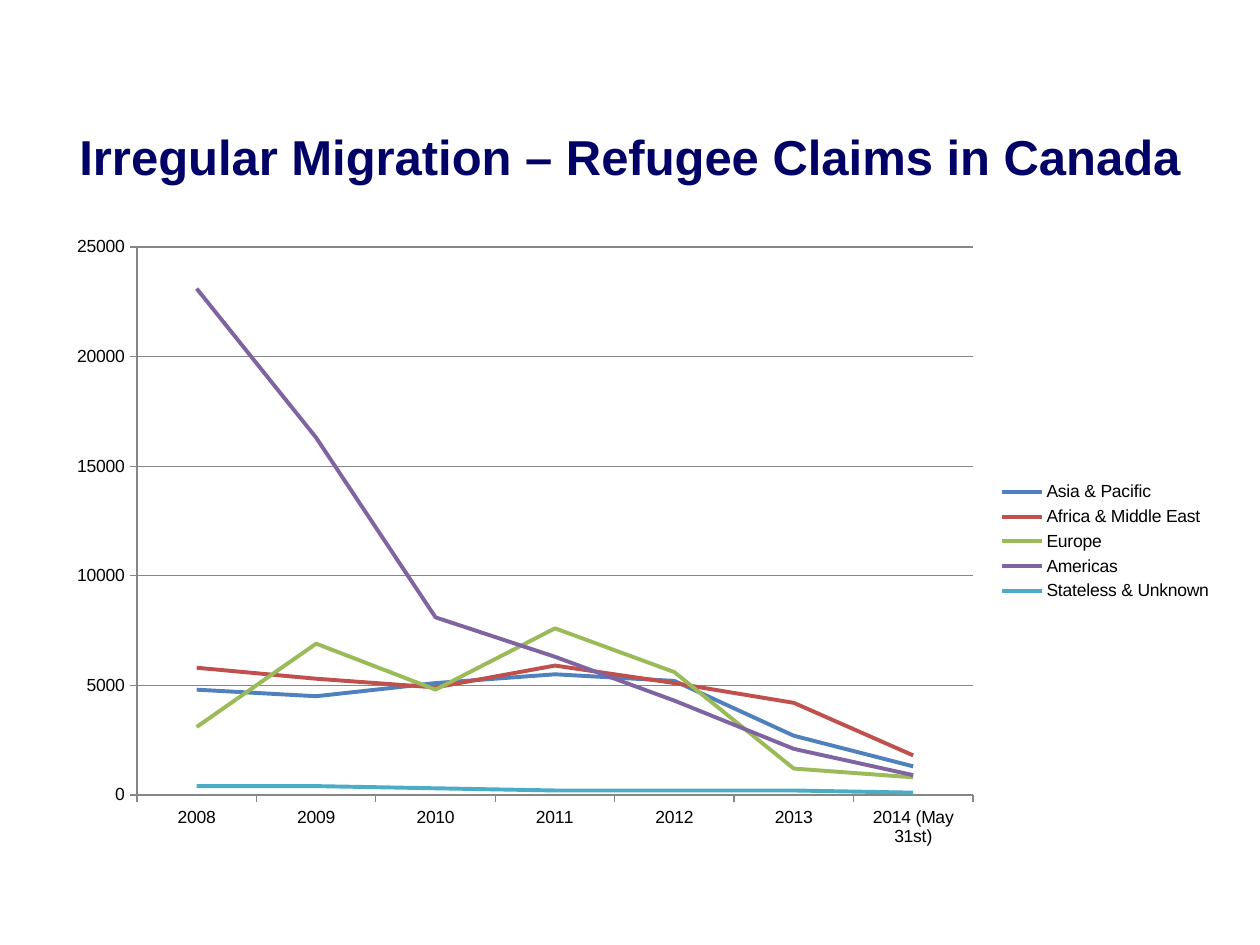
import lxml.etree
import pptx
import pptx.chart.data
import pptx.dml.color
import pptx.enum.chart
import pptx.enum.text
import pptx.oxml.ns
import pptx.util

PX = 914400 / 126
YEARS = ["2008", "2009", "2010", "2011", "2012", "2013", "2014 (May 31st)"]
CLAIMS = [
    ("Asia & Pacific", "4F81BD", [4800, 4500, 5100, 5500, 5200, 2700, 1300]),
    ("Africa & Middle East", "C0504D", [5800, 5300, 4900, 5900, 5100, 4200, 1800]),
    ("Europe", "9BBB59", [3100, 6900, 4800, 7600, 5600, 1200, 800]),
    ("Americas", "8064A2", [23100, 16300, 8100, 6300, 4300, 2100, 900]),
    ("Stateless & Unknown", "4BACC6", [400, 400, 300, 200, 200, 200, 100]),
]


def px(*lengths):
    return [pptx.util.Emu(round(length * PX)) for length in lengths]


def color(hex_code):
    return pptx.dml.color.RGBColor.from_string(hex_code)


def apply(target, values):
    for name, value in values.items():
        setattr(target, name, value)


class Deck:
    font = "Arial"
    navy, black, gray = "000066", "000000", "868686"

    def __init__(self, width, height):
        self.prs = pptx.Presentation()
        apply(self.prs, dict(zip(("slide_width", "slide_height"), px(width, height))))
        self.slide = self.prs.slides.add_slide(self.prs.slide_layouts[6])

    def style_font(self, font, size, hex_code, bold=False):
        apply(font, {"name": self.font, "size": pptx.util.Pt(size), "bold": bold})
        font.color.rgb = color(hex_code)

    def style_line(self, line, hex_code, width):
        line.color.rgb = color(hex_code)
        line.width = pptx.util.Pt(width)

    def title(self, text, box):
        frame = self.slide.shapes.add_textbox(*px(*box)).text_frame
        apply(frame, {"word_wrap": True, "margin_left": 0, "margin_right": 0,
                      "vertical_anchor": pptx.enum.text.MSO_ANCHOR.MIDDLE})
        heading = frame.paragraphs[0]
        heading.alignment = pptx.enum.text.PP_ALIGN.CENTER
        run = heading.add_run()
        run.text = text
        self.style_font(run.font, 28, self.navy, bold=True)

    def line_chart(self, categories, series, box, plot_box):
        data = pptx.chart.data.CategoryChartData(number_format="General")
        data.categories = categories
        for name, _, values in series:
            data.add_series(name, values)
        chart = self.slide.shapes.add_chart(
            pptx.enum.chart.XL_CHART_TYPE.LINE, *px(*box), data).chart
        self.style_font(chart.font, 10, self.black)
        apply(chart, {"has_title": False, "has_legend": True})
        apply(chart.legend, {"position": pptx.enum.chart.XL_LEGEND_POSITION.RIGHT,
                             "include_in_layout": False})
        chart.plots[0].vary_by_categories = False

        # Series lines
        for line, (_, hex_code, _) in zip(chart.plots[0].series, series):
            line.smooth = False
            line.marker.style = pptx.enum.chart.XL_MARKER_STYLE.NONE
            self.style_line(line.format.line, hex_code, 2.25)

        # Axes and gridlines
        for axis in (chart.category_axis, chart.value_axis):
            axis.major_tick_mark = pptx.enum.chart.XL_TICK_MARK.OUTSIDE
            self.style_line(axis.format.line, self.gray, 0.75)
        apply(chart.value_axis, {"minimum_scale": 0, "maximum_scale": 25000,
                                 "major_unit": 5000, "has_major_gridlines": True})
        self.style_line(chart.value_axis.major_gridlines.format.line, self.gray, 0.75)
        self.place_plot(chart, box, plot_box)

    def place_plot(self, chart, box, plot_box):
        qn = pptx.oxml.ns.qn
        plot_area = chart.plots[0]._element.getparent()
        for old in plot_area.findall(qn("c:layout")):
            plot_area.remove(old)
        layout = lxml.etree.Element(qn("c:layout"))
        plot_area.insert(0, layout)
        manual = lxml.etree.SubElement(layout, qn("c:manualLayout"))
        left, top, width, height = box
        x, y, w, h = plot_box
        settings = {"layoutTarget": "inner", "xMode": "edge", "yMode": "edge",
                    "x": (x - left) / width, "y": (y - top) / height,
                    "w": w / width, "h": h / height}
        for tag, value in settings.items():
            lxml.etree.SubElement(manual, qn("c:" + tag)).set("val", str(value))


def main():
    deck = Deck(1260, 945)
    deck.title("Irregular Migration – Refugee Claims in Canada", (63, 115, 1134, 81))
    deck.line_chart(YEARS, CLAIMS, (54, 224, 1171, 635), (137, 247, 836, 548))
    deck.prs.save("out.pptx")


if __name__ == "__main__":
    main()
